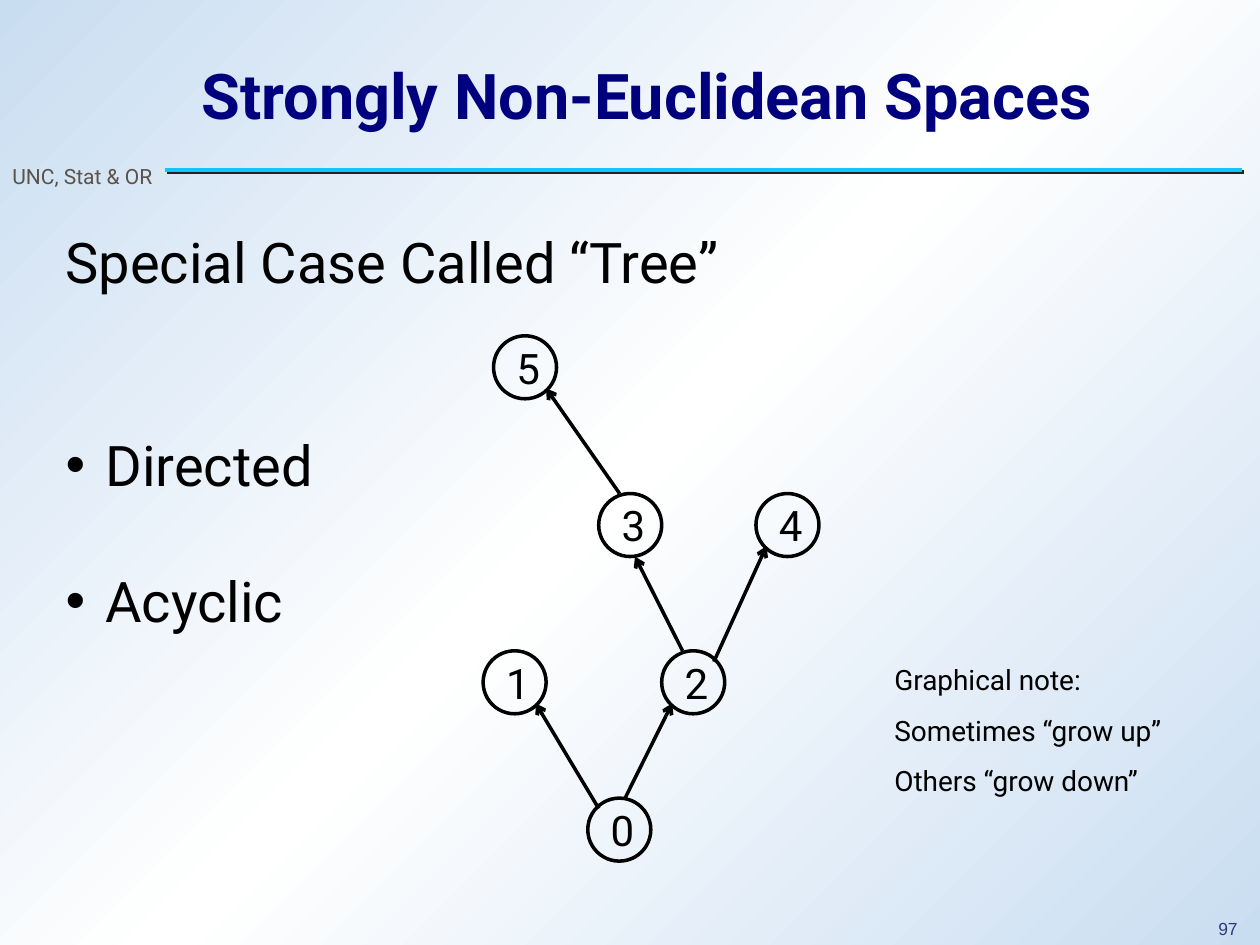
import copy
import pptx
import pptx.util
import pptx.dml.color
import pptx.enum.dml
import pptx.enum.shapes
import pptx.enum.text
import pptx.oxml
import pptx.oxml.ns
from pptx.util import Cm

HUES = {
    "edge": "C9DDF1", "mid": "FFFFFF", "rule": "0FC7FF", "shade": "232323",
    "title": "00007F", "text": "000000", "unit": "5B5249", "page": "2A3D7A",
}
SIDE = 1.27
NODES = {
    "0": (11.85, 16.09), "1": (9.74, 13.12), "2": (13.34, 13.12),
    "3": (12.07, 9.95), "4": (15.24, 9.95), "5": (9.95, 6.77),
}
EDGES = [
    (12.07, 16.3, 10.8, 14.18),
    (12.6, 16.09, 13.55, 14.18),
    (13.76, 13.12, 12.8, 11.22),
    (14.39, 13.34, 15.45, 11.01),
    (12.49, 9.95, 11.01, 7.83),
]


def tint(key):
    return pptx.dml.color.RGBColor.from_string(HUES[key])


def add_xml(host, tag, **attrs):
    node = pptx.oxml.parse_xml(f"<a:{tag} {pptx.oxml.ns.nsdecls('a')}/>")
    for name, value in attrs.items():
        node.set(name, str(value))
    host.append(node)
    return node


def style(frame, size, key="text", font="Roboto", bold=False):
    for para in frame.paragraphs:
        for run in para.runs:
            run.font.name = font
            run.font.size = pptx.util.Pt(size)
            run.font.bold = bold
            run.font.color.rgb = tint(key)


def place(shape, left, top, width, height):
    shape.left, shape.top = Cm(left), Cm(top)
    shape.width, shape.height = Cm(width), Cm(height)


def paint_back(slide):
    fill = slide.background.fill
    fill.gradient()
    fill.gradient_angle = 315
    first = fill.gradient_stops[0]
    first.color.rgb = tint("edge")
    stops = slide.background.fill._fill._gradFill.gsLst
    stops.insert(1, copy.deepcopy(stops[0]))
    for stop, key, pos in zip(fill.gradient_stops, ("edge", "mid", "edge"), (0, 0.5, 1)):
        stop.color.rgb = tint(key)
        stop.position = pos


def add_line(slide, ends, key, width):
    kind = pptx.enum.shapes.MSO_CONNECTOR.STRAIGHT
    line = slide.shapes.add_connector(kind, *map(Cm, ends))
    line.line.color.rgb = tint(key)
    line.line.width = pptx.util.Pt(width)
    return line, add_xml(line._element.spPr, "effectLst")


def add_rule(slide):
    line, effect = add_line(slide, (3.33, 3.43, 25.04, 3.43), "rule", 2.25)
    shadow = add_xml(effect, "outerShdw", dist=pptx.util.Pt(1.4), dir=2700000)
    add_xml(shadow, "srgbClr", val=HUES["shade"])


def add_arrow(slide, ends):
    line, effect = add_line(slide, ends, "text", 2)
    add_xml(line.line._get_or_add_ln(), "tailEnd", type="arrow")


def add_node(slide, label, spot):
    kind = pptx.enum.shapes.MSO_SHAPE.OVAL
    node = slide.shapes.add_shape(kind, *map(Cm, spot), Cm(SIDE), Cm(SIDE))
    node.shadow.inherit = False
    node.fill.background()
    node.line.color.rgb = tint("text")
    node.line.width = pptx.util.Pt(2)
    frame = node.text_frame
    frame.word_wrap = False
    frame.margin_left, frame.margin_right = Cm(0.13), 0
    frame.margin_top = frame.margin_bottom = 0
    frame.text = label
    frame.paragraphs[0].alignment = pptx.enum.text.PP_ALIGN.CENTER
    style(frame, 24)


def add_text(slide, box, text, size, key="text", font="Roboto", wrap=False, gap=1.0):
    frame = slide.shapes.add_textbox(*map(Cm, box)).text_frame
    frame.word_wrap = wrap
    frame.text = text
    for para in frame.paragraphs:
        para.line_spacing = gap
    style(frame, size, key, font)


def set_title(slide):
    title = slide.shapes.title
    place(title, 3.81, 0.84, 20.75, 2.11)
    frame = title.text_frame
    frame.text = "Strongly Non-Euclidean Spaces"
    frame.auto_size = pptx.enum.text.MSO_AUTO_SIZE.NONE
    frame.vertical_anchor = pptx.enum.text.MSO_ANCHOR.MIDDLE
    frame.paragraphs[0].alignment = pptx.enum.text.PP_ALIGN.LEFT
    style(frame, 36, "title", bold=True)


def set_list(slide):
    body = slide.placeholders[1]
    place(body, 1.07, 4.45, 14.4, 8.46)
    frame = body.text_frame
    frame.text = "Special Case Called “Tree”\nDirected\nAcyclic"
    frame.auto_size = pptx.enum.text.MSO_AUTO_SIZE.NONE
    for para, space, dot in zip(frame.paragraphs, (0, 78, 39), (False, True, True)):
        para.space_before = pptx.util.Pt(space)
        props = para._p.get_or_add_pPr()
        indent = Cm(0.8) if dot else 0
        props.set("marL", str(indent))
        props.set("indent", str(-indent))
        if dot:
            add_xml(props, "buChar", char="•")
        else:
            add_xml(props, "buNone")
    style(frame, 32)


def main():
    deck = pptx.Presentation()
    deck.slide_width, deck.slide_height = Cm(25.4), Cm(19.05)
    slide = deck.slides.add_slide(deck.slide_layouts[1])
    paint_back(slide)
    add_rule(slide)
    add_text(slide, (24.31, 18.42, 0.94, 0.64), "97", 10, "page", "Arial", gap=0.9)
    add_text(slide, (0, 3.18, 3.43, 0.76), "UNC, Stat & OR", 12, "unit")
    set_title(slide)
    set_list(slide)
    for label, spot in NODES.items():
        add_node(slide, label, spot)
    for ends in EDGES:
        add_arrow(slide, ends)
    note = "Graphical note:\nSometimes “grow up”\nOthers “grow down”"
    add_text(slide, (17.78, 12.9, 6.5, 3.2), note, 16, wrap=True, gap=1.5)
    deck.save("out.pptx")


if __name__ == "__main__":
    main()
